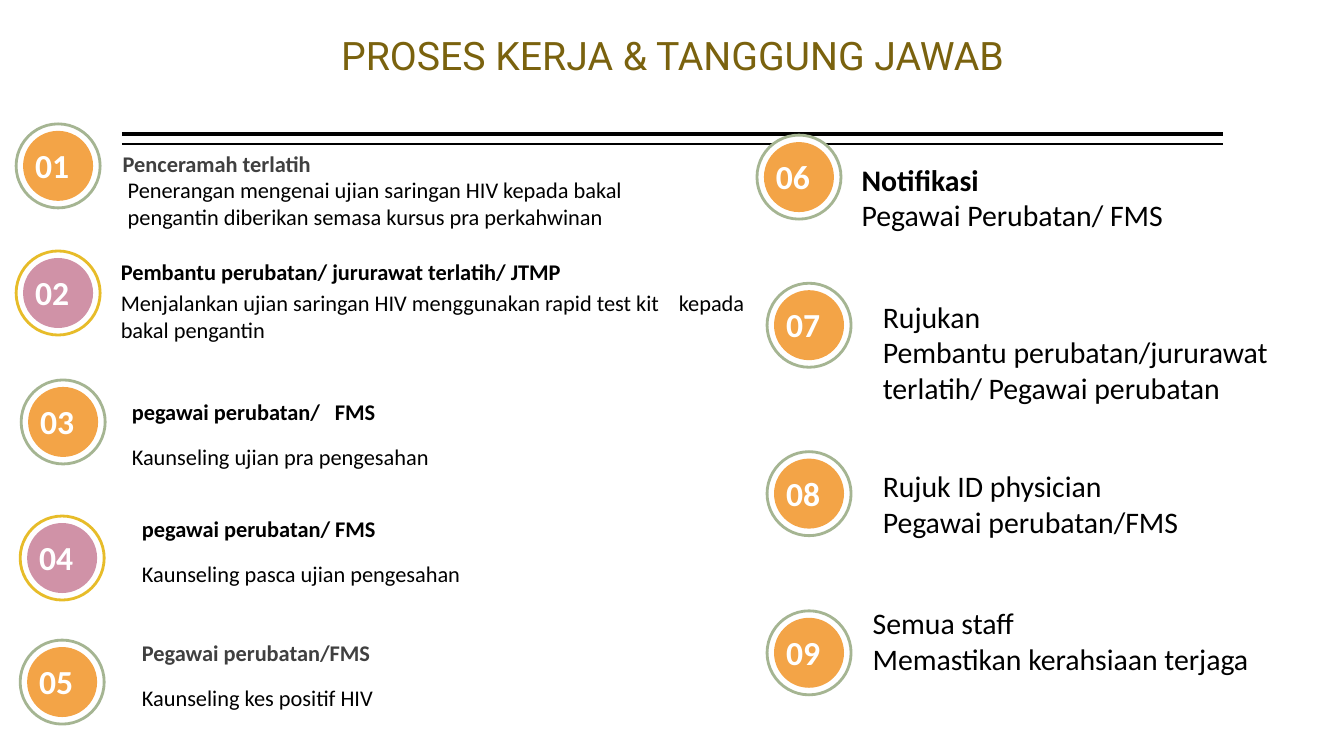
from lxml.etree import SubElement
from pptx import Presentation
from pptx.dml.color import RGBColor
from pptx.enum.shapes import MSO_CONNECTOR, MSO_SHAPE
from pptx.enum.text import MSO_ANCHOR, MSO_AUTO_SIZE, PP_ALIGN
from pptx.oxml.ns import qn
from pptx.util import Pt

COLORS = {
    "white": "FFFFFF", "black": "000000", "gray": "404040", "title": "7A620E",
    "orange": "F3A447", "pink": "D092A7", "green": "A5B592", "gold": "E7BC29",
}
SCHEMES = {"orange": "green", "pink": "gold"}  # disc colour: ring colour

# number, disc, badge (left, top), heading, colour, (left, top), body, (left, top), tab stop
LEFT_STEPS = [
    ("01", "orange", (11.5, 88.5), "Penceramah terlatih", "gray", (80.6, 103.7),
     ["Penerangan mengenai ujian saringan HIV kepada bakal",
      "pengantin diberikan semasa kursus pra perkahwinan"], (84.2, 122.4), None),
    ("02", "pink", (11.5, 179.3), "Pembantu perubatan/ jururawat terlatih/ JTMP", "black",
     (79.2, 180.7),
     ["Menjalankan ujian saringan HIV menggunakan rapid test kit\tkepada bakal pengantin"],
     (79.2, 203), 398.6),
    ("03", "orange", (15.1, 271.4), "pegawai perubatan/\tFMS", "black", (87.1, 280.8),
     ["Kaunseling ujian pra pengesahan"], (87.1, 313.2), 145),
    ("04", "pink", (14.4, 368.6), "pegawai perubatan/ FMS", "black", (94.3, 364.3),
     ["Kaunseling pasca ujian pengesahan"], (94.3, 396.7), None),
    ("05", "orange", (14.4, 457.2), "Pegawai perubatan/FMS", "gray", (94.3, 452.9),
     ["Kaunseling kes positif HIV"], (94.3, 485.3), None),
]
# number, badge (left, top), heading, bold, body, text box (left, top, width, height)
RIGHT_STEPS = [
    ("06", (540.7, 96.5), "Notifikasi", True, "Pegawai Perubatan/ FMS",
     (608.4, 111.6, 332.6, 59)),
    ("07", (547.9, 202.3), "Rujukan", False,
     "Pembantu perubatan/jururawat terlatih/ Pegawai perubatan", (623.5, 209.5, 317.5, 85)),
    ("08", (547.9, 322.6), "Rujuk ID physician", False, "Pegawai perubatan/FMS",
     (623.5, 330.5, 302.4, 59)),
    ("09", (547.9, 436.3), "Semua staff", False, "Memastikan kerahsiaan terjaga",
     (616.3, 428.4, 324.7, 59)),
]


def rgb(name):
    return RGBColor.from_string(COLORS[name])


class ProcessSlide:
    def __init__(self, slide, font="Calibri"):
        self.slide = slide
        self.font = font

    def rule(self, left, right, top, weight):
        line = self.slide.shapes.add_connector(
            MSO_CONNECTOR.STRAIGHT, Pt(left), Pt(top), Pt(right), Pt(top))
        line.line.color.rgb = rgb("black")
        line.line.width = Pt(weight)
        SubElement(line.element.spPr, qn("a:effectLst"))

    def text(self, place, lines, size, font=None, shapes=None, wrap=True, tab=None):
        """Add a text box; each line is (wording, colour, bold)."""
        box = (shapes or self.slide.shapes).add_textbox(*map(Pt, place))
        frame = box.text_frame
        frame.word_wrap = wrap
        frame.auto_size = MSO_AUTO_SIZE.SHAPE_TO_FIT_TEXT
        for index, (wording, color, bold) in enumerate(lines):
            para = frame.add_paragraph() if index else frame.paragraphs[0]
            span = para.add_run()
            span.text = wording
            span.font.name = font or self.font
            span.font.size = Pt(size)
            span.font.bold = bold
            span.font.color.rgb = rgb(color)
            if tab:
                stops = SubElement(para._p.get_or_add_pPr(), qn("a:tabLst"))
                SubElement(stops, qn("a:tab"), pos=str(Pt(tab)), algn="l")
        return frame

    def title(self, wording, place):
        frame = self.text(place, [(wording, "title", False)], 28, "Roboto")
        frame.auto_size = MSO_AUTO_SIZE.NONE
        frame.vertical_anchor = MSO_ANCHOR.BOTTOM
        frame.margin_left = frame.margin_right = 0
        frame.margin_bottom = Pt(35.6)
        frame.paragraphs[0].alignment = PP_ALIGN.CENTER
        frame.paragraphs[0].line_spacing = 0.9

    def disc(self, shapes, left, top, size, fill, ring=None):
        disc = shapes.add_shape(MSO_SHAPE.OVAL, Pt(left), Pt(top), Pt(size), Pt(size))
        disc.shadow.inherit = False
        disc.fill.solid()
        disc.fill.fore_color.rgb = rgb(fill)
        if ring:
            disc.line.color.rgb = rgb(ring)
            disc.line.width = Pt(2)
        else:
            disc.line.fill.background()

    def badge(self, number, left, top, color="orange"):
        shapes = self.slide.shapes.add_group_shape().shapes
        self.disc(shapes, left, top, 60, "white", SCHEMES[color])
        self.disc(shapes, left + 5, top + 5, 50, color)
        frame = self.text((left + 6.5, top + 11.5, 42, 36), [(number, "white", True)], 24,
                          shapes=shapes, wrap=False)
        frame.vertical_anchor = MSO_ANCHOR.MIDDLE


def main():
    deck = Presentation()
    deck.slide_width, deck.slide_height = Pt(960), Pt(540)
    page = ProcessSlide(deck.slides.add_slide(deck.slide_layouts[6]))

    page.rule(87, 873.5, 96, 3)
    page.rule(87, 873.5, 103, 1)
    page.title("PROSES KERJA & TANGGUNG JAWAB", (87, 5.8, 786.5, 86.4))

    for number, disc, spot, heading, color, head_at, body, body_at, tab in LEFT_STEPS:
        page.badge(number, *spot, disc)
        page.text((*body_at, 460.8, 7.2 + 19.5 * len(body)),
                  [(line, "black", False) for line in body], 16, tab=tab)
        page.text((*head_at, 460.8, 26.7), [(heading, color, True)], 16, tab=tab)

    for number, spot, heading, bold, body, place in RIGHT_STEPS:
        page.badge(number, *spot)
        page.text(place, [(heading, "black", bold), (body, "black", False)], 21.3)

    deck.save("out.pptx")


if __name__ == "__main__":
    main()
